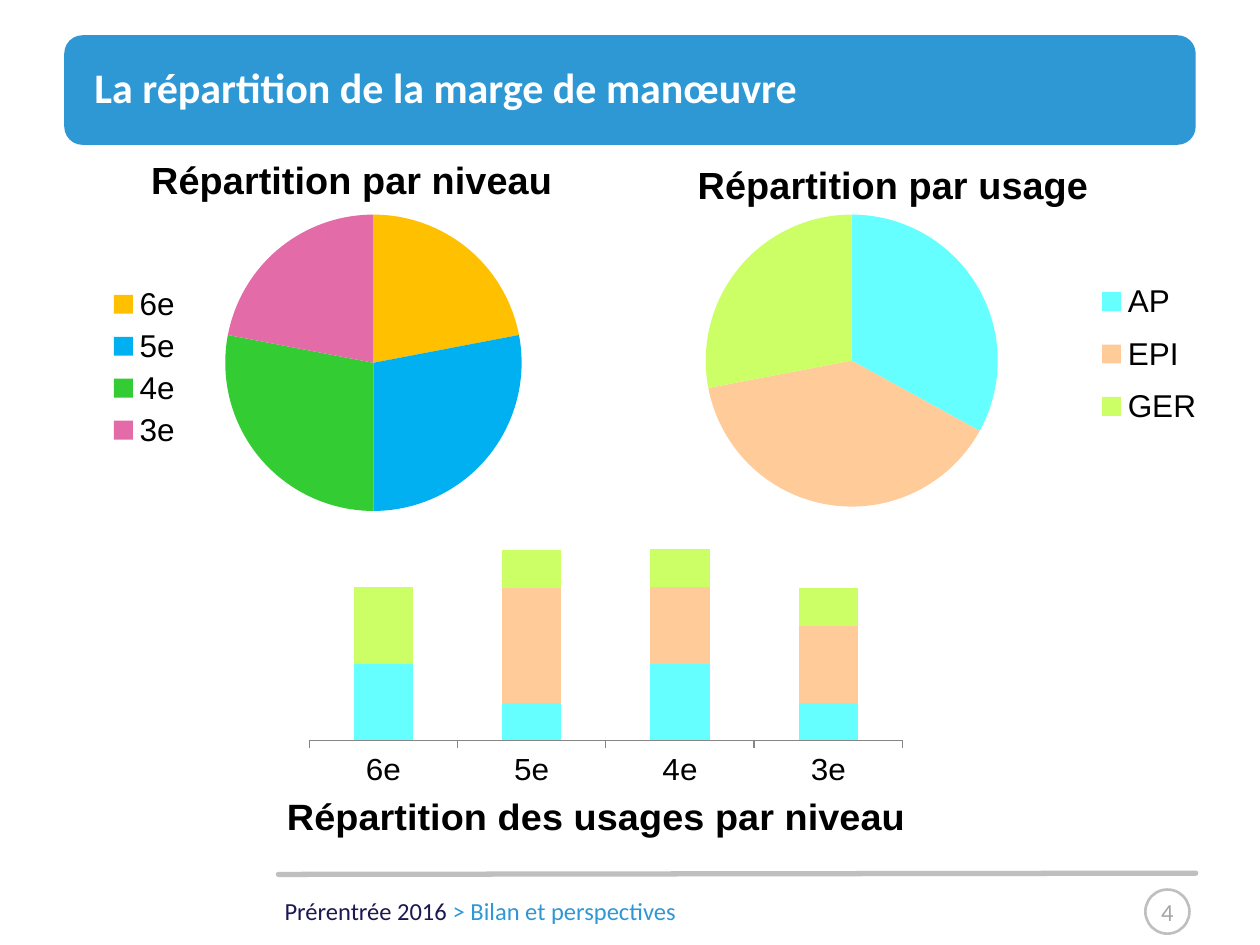
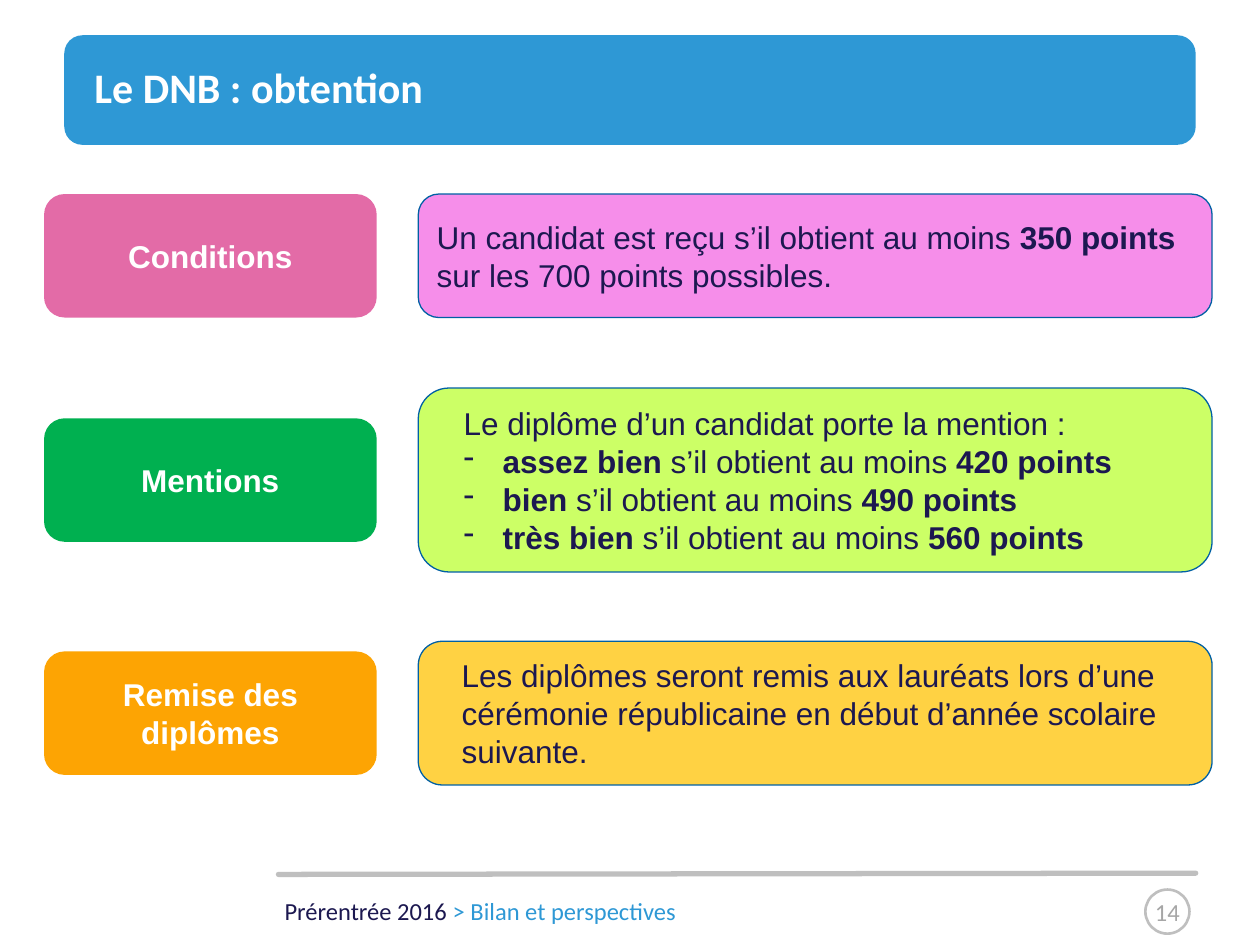
from dataclasses import dataclass

from lxml.etree import SubElement
from pptx import Presentation
from pptx.chart.data import CategoryChartData
from pptx.dml.color import RGBColor
from pptx.enum.chart import XL_CHART_TYPE, XL_LEGEND_POSITION, XL_TICK_MARK
from pptx.enum.shapes import MSO_CONNECTOR, MSO_SHAPE
from pptx.enum.text import MSO_ANCHOR, PP_ALIGN
from pptx.oxml import parse_xml
from pptx.oxml.ns import nsdecls, qn
from pptx.util import Inches, Pt


@dataclass(frozen=True)
class Theme:
    blue: str = "2E98D5"
    navy: str = "1C1850"
    outline: str = "0060A4"
    rule: str = "BFBFBF"
    number: str = "A6A6A6"
    axis: str = "868686"
    white: str = "FFFFFF"
    black: str = "000000"
    heading_font: str = "Calibri"
    body_font: str = "Arial"
    title_size: float = 24
    chart_title_size: float = 21.6
    body_size: float = 18
    footer_size: float = 14


THEME = Theme()

FOOTER = [("Prérentrée 2016 ", THEME.navy), ("> Bilan et perspectives", THEME.blue)]

LEVEL_COLORS = {"6e": "FFC000", "5e": "00B0F0", "4e": "33CC33", "3e": "E36BA7"}
USAGE_COLORS = {"AP": "66FFFF", "EPI": "FFCC99", "GER": "CCFF66"}

# Places inside a chart are fractions of its width and height.
PIES = [
    dict(title="Répartition par niveau", at=(0.28, 1.15, 4.33, 3.46),
         shares=(22, 28, 28, 22), colors=LEVEL_COLORS, title_at=(0.2, 0.01),
         plot_at=(0.32, 0.16, 0.6, 0.68), legend_at=(0.12, 0.31, 0.16, 0.4)),
    dict(title="Répartition par usage", at=(5.31, 1.15, 4.33, 3.46),
         shares=(33, 39, 28), colors=USAGE_COLORS, title_at=(0.04, 0.02),
         plot_at=(0.04, 0.16, 0.59, 0.67), legend_at=(0.76, 0.28, 0.24, 0.4)),
]
USAGE_BY_LEVEL = dict(
    title="Répartition des usages par niveau", at=(0.91, 4.06, 7.72, 2.68),
    title_at=(0.17, 0.84), plot_at=(0.2, 0, 0.61, 0.7),
    hours={"AP": (67, 33, 67, 33), "EPI": (None, 100, 67, 67), "GER": (67, 33, 33, 33)})

# Each paragraph: left margin, first-line indent, runs of (text, bold).
DNB_ROWS = [
    dict(label="Conditions", label_color="E36BA7", panel_color="F68EEA",
         top=1.54, height=0.98, paragraphs=[
             (0, 0, [("Un candidat est reçu s’il obtient au moins ", False),
                     ("350 points", True), (" sur les 700 points possibles.", False)])]),
    dict(label="Mentions", label_color="00B050", panel_color="CCFF66",
         top=3.08, height=1.46, paragraphs=[
             (0.19, 0, [("Le diplôme d’un candidat porte la mention :", False)])] + [
             (0.5, -0.31, [(mention, True), (" s’il obtient au moins ", False),
                           (f"{points} points", True)])
             for mention, points in (("assez bien", 420), ("bien", 490), ("très bien", 560))]),
    dict(label="Remise des diplômes", label_color="FDA403", panel_color="FFD243",
         top=5.09, height=1.14, paragraphs=[
             (0.19, 0, [("Les diplômes seront remis aux lauréats lors d’une cérémonie "
                         "républicaine en début d’année scolaire suivante.", False)])]),
]
LABEL_LEFT, LABEL_WIDTH, LABEL_HEIGHT = 0.35, 2.64, 0.98
PANEL_LEFT, PANEL_WIDTH = 3.32, 6.3


def rgb(color):
    return RGBColor.from_string(color)


def inches(*lengths):
    return [Inches(length) for length in lengths]


def style_font(font, size, color, name=THEME.body_font, bold=False):
    font.size, font.name, font.bold = Pt(size), name, bold
    font.color.rgb = rgb(color)


def add_outline_shape(slide, kind, at, fill=None, line=None, width=0.75):
    shape = slide.shapes.add_shape(kind, *inches(*at))
    shape.shadow.inherit = False
    if fill:
        shape.fill.solid()
        shape.fill.fore_color.rgb = rgb(fill)
    else:
        shape.fill.background()
    if line:
        shape.line.color.rgb = rgb(line)
        shape.line.width = Pt(width)
    else:
        shape.line.fill.background()
    shape.text_frame.word_wrap = True
    shape.text_frame.vertical_anchor = MSO_ANCHOR.MIDDLE
    return shape


def add_frame(prs, title, number):
    """Add a slide with the title band, footer, rule and page number."""
    slide = prs.slides.add_slide(prs.slide_layouts[6])
    add_outline_shape(slide, MSO_SHAPE.ROUNDED_RECTANGLE, (0.51, 0.28, 8.98, 0.87), THEME.blue)

    footer = slide.shapes.add_textbox(*inches(2.16, 7.06, 5.91, 0.34)).text_frame
    footer.word_wrap = True
    for text, color in FOOTER:
        run = footer.paragraphs[0].add_run()
        run.text = text
        style_font(run.font, THEME.footer_size, color, THEME.heading_font)

    rule = slide.shapes.add_connector(MSO_CONNECTOR.STRAIGHT, *inches(2.21, 6.94, 9.49, 6.93))
    rule.line.color.rgb = rgb(THEME.rule)
    rule.line.width = Pt(3)
    properties = rule._element.spPr
    properties.find(qn("a:ln")).set("cap", "rnd")
    SubElement(properties, qn("a:effectLst"))

    badge = add_outline_shape(slide, MSO_SHAPE.OVAL, (9.09, 7.06, 0.35, 0.35),
                              line=THEME.rule, width=1.5).text_frame
    badge.margin_left = badge.margin_right = 0
    badge.text = str(number)
    badge.paragraphs[0].alignment = PP_ALIGN.CENTER
    style_font(badge.paragraphs[0].font, THEME.footer_size, THEME.number, THEME.heading_font)

    heading = slide.shapes.add_textbox(*inches(0.75, 0.18, 8.74, 1.02)).text_frame
    heading.margin_left = heading.margin_right = heading.margin_top = heading.margin_bottom = 0
    heading.word_wrap = True
    heading.vertical_anchor = MSO_ANCHOR.MIDDLE
    heading.text = title
    style_font(heading.paragraphs[0].font, THEME.title_size, THEME.white,
               THEME.heading_font, bold=True)
    return slide


def place(element, index, fractions, inner=False):
    """Give a chart part a manual layout, as its child number index."""
    for old in element.findall(qn("c:layout")):
        element.remove(old)
    target = '<c:layoutTarget val="inner"/>' if inner else ""
    values = "".join(f'<c:{key} val="{value}"/>' for key, value in zip("xywh", fractions))
    element.insert(index, parse_xml(
        f'<c:layout {nsdecls("c")}><c:manualLayout>{target}<c:xMode val="edge"/>'
        f'<c:yMode val="edge"/>{values}</c:manualLayout></c:layout>'))


def add_titled_chart(slide, kind, details, categories, series):
    data = CategoryChartData()
    data.categories = categories
    for name, values in series.items():
        data.add_series(name, values)
    chart = slide.shapes.add_chart(kind, *inches(*details["at"]), data).chart
    style_font(chart.font, THEME.body_size, THEME.black)
    chart.has_title = True
    chart.chart_title.text_frame.text = details["title"]
    style_font(chart.chart_title.text_frame.paragraphs[0].font,
               THEME.chart_title_size, THEME.black, bold=True)
    place(chart.chart_title._element, 1, details["title_at"])
    place(chart._chartSpace.chart.plotArea, 0, details["plot_at"], inner=True)
    return chart


def paint(part, color):
    part.format.fill.solid()
    part.format.fill.fore_color.rgb = rgb(color)


def add_pie(slide, pie):
    chart = add_titled_chart(slide, XL_CHART_TYPE.PIE, pie, list(pie["colors"]),
                             {pie["title"]: pie["shares"]})
    chart.plots[0].vary_by_categories = True
    for index, color in enumerate(pie["colors"].values()):
        paint(chart.series[0].points[index], color)
    chart.has_legend = True
    chart.legend.position = XL_LEGEND_POSITION.RIGHT
    chart.legend.include_in_layout = False
    style_font(chart.legend.font, THEME.body_size, THEME.black)
    place(chart.legend._element, 1, pie["legend_at"])


def add_usage_columns(slide, details):
    chart = add_titled_chart(slide, XL_CHART_TYPE.COLUMN_STACKED, details,
                             list(LEVEL_COLORS), details["hours"])
    chart.has_legend = False
    plot = chart.plots[0]
    plot.vary_by_categories = False
    plot.gap_width, plot.overlap = 150, 100
    for usage in plot.series:
        paint(usage, USAGE_COLORS[usage.name])
    chart.value_axis.visible = False
    chart.value_axis.has_major_gridlines = False
    chart.value_axis.minimum_scale, chart.value_axis.maximum_scale = 0, 200
    levels = chart.category_axis
    levels.major_tick_mark = XL_TICK_MARK.OUTSIDE
    levels.format.line.color.rgb = rgb(THEME.axis)
    style_font(levels.tick_labels.font, THEME.body_size, THEME.black)


def add_dnb_row(slide, row):
    label_top = row["top"] + (row["height"] - LABEL_HEIGHT) / 2
    label = add_outline_shape(slide, MSO_SHAPE.ROUNDED_RECTANGLE,
                              (LABEL_LEFT, label_top, LABEL_WIDTH, LABEL_HEIGHT),
                              row["label_color"]).text_frame
    label.text = row["label"]
    label.paragraphs[0].alignment = PP_ALIGN.CENTER
    style_font(label.paragraphs[0].font, THEME.body_size, THEME.white, bold=True)

    panel = add_outline_shape(slide, MSO_SHAPE.ROUNDED_RECTANGLE,
                              (PANEL_LEFT, row["top"], PANEL_WIDTH, row["height"]),
                              row["panel_color"], THEME.outline).text_frame
    for index, (margin, indent, runs) in enumerate(row["paragraphs"]):
        paragraph = panel.add_paragraph() if index else panel.paragraphs[0]
        paragraph.alignment = PP_ALIGN.LEFT
        properties = paragraph._p.get_or_add_pPr()
        properties.set("marL", str(Inches(margin)))
        properties.set("indent", str(Inches(indent)))
        if indent:
            SubElement(properties, qn("a:buChar")).set("char", "-")
        style_font(paragraph.font, THEME.body_size, THEME.navy)
        for text, bold in runs:
            run = paragraph.add_run()
            run.text = text
            run.font.bold = bold


def main():
    prs = Presentation()
    prs.slide_width, prs.slide_height = inches(10, 7.5)

    margin_slide = add_frame(prs, "La répartition de la marge de manœuvre", 4)
    for pie in PIES:
        add_pie(margin_slide, pie)
    add_usage_columns(margin_slide, USAGE_BY_LEVEL)

    dnb_slide = add_frame(prs, "Le DNB : obtention", 14)
    for row in DNB_ROWS:
        add_dnb_row(dnb_slide, row)

    prs.save("out.pptx")


if __name__ == "__main__":
    main()
